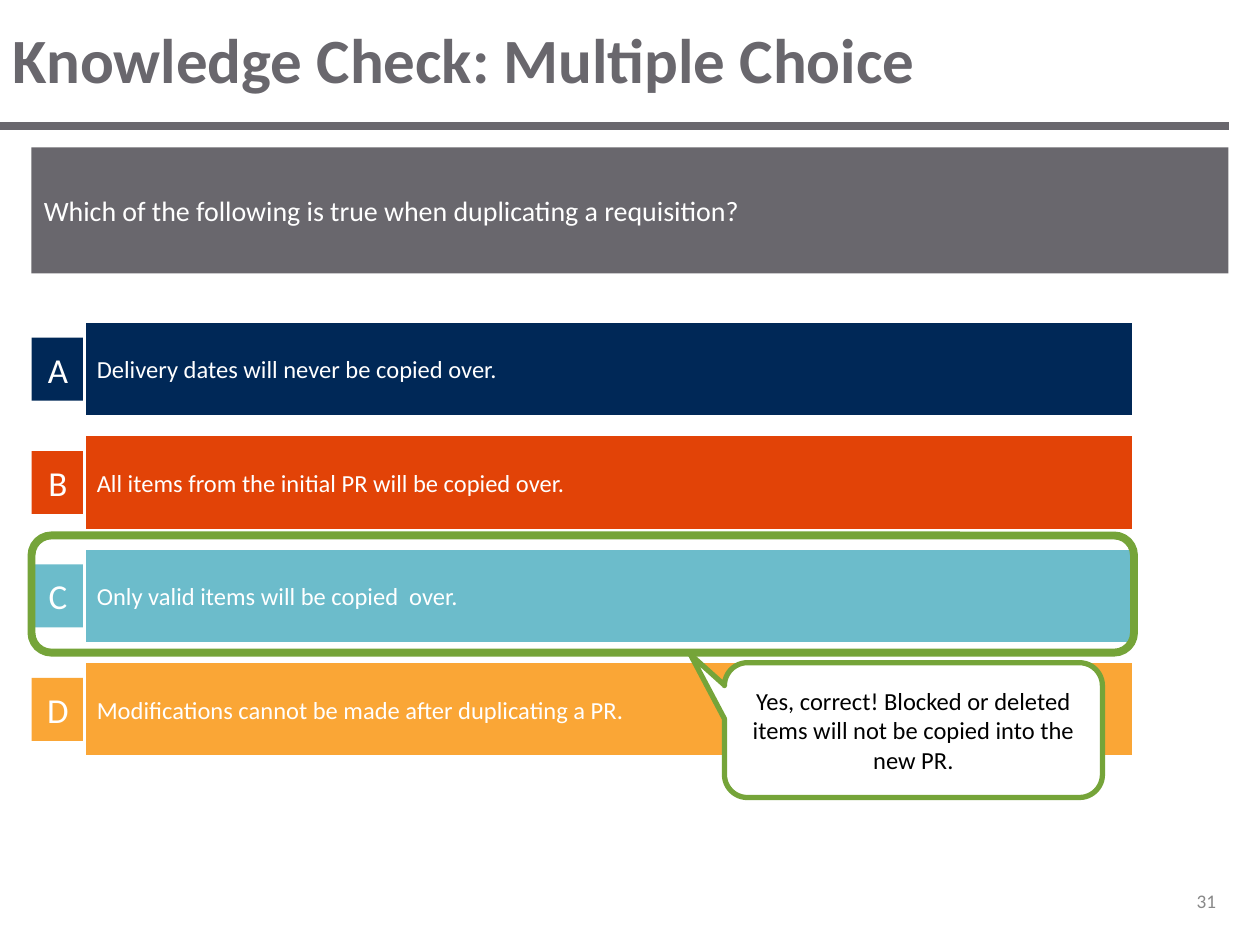
from lxml.etree import SubElement
from pptx import Presentation
from pptx.dml.color import RGBColor
from pptx.enum.shapes import MSO_CONNECTOR, MSO_SHAPE
from pptx.enum.text import MSO_ANCHOR, PP_ALIGN
from pptx.oxml.ns import qn
from pptx.util import Inches, Pt

TITLE = "Knowledge Check: Multiple Choice"
QUESTION = "Which of the following is true when duplicating a requisition?"
ANSWERS = [
    ("A", "Delivery dates will never be copied over.", "002857"),
    ("B", "All items from the initial PR will be copied over.", "E24307"),
    ("C", "Only valid items will be copied  over.", "6CBCCB"),
    ("D", "Modifications cannot be made after duplicating a PR.", "FAA636"),
]
REPLY = "Yes, correct! Blocked or deleted items will not be copied into the new PR."
PAGE = "31"
GRAY, GREEN, WHITE = "69676D", "75A439", "FFFFFF"
LEFT, TOP, STEP = 0.25, 2.55, 0.9
TAG_W, TAG_H, BAR_W, BAR_H = 0.42, 0.5, 8.33, 0.76


def color(value):
    return RGBColor.from_string(value)


def write(shape, text, size, ink=WHITE, align=PP_ALIGN.LEFT, bold=False):
    frame = shape.text_frame
    frame.word_wrap = True
    frame.vertical_anchor = MSO_ANCHOR.MIDDLE
    para = frame.paragraphs[0]
    para.alignment = align
    run = para.add_run()
    run.text = text
    font = run.font
    font.name, font.size, font.bold = "Calibri", Pt(size), bold
    font.color.rgb = color(ink)


def add_box(kind, box, fill=None, line=None, width=0):
    shape = slide.shapes.add_shape(kind, *map(Inches, box))
    shape.shadow.inherit = False
    if fill:
        shape.fill.solid()
        shape.fill.fore_color.rgb = color(fill)
    else:
        shape.fill.background()
    if line:
        shape.line.color.rgb = color(line)
        shape.line.width = Pt(width)
    else:
        shape.line.fill.background()
    return shape


deck = Presentation()
deck.slide_width, deck.slide_height = Inches(10), Inches(7.5)
slide = deck.slides.add_slide(deck.slide_layouts[5])

rule = slide.shapes.add_connector(
    MSO_CONNECTOR.STRAIGHT, Inches(0), Inches(1), Inches(9.75), Inches(1))
rule.line.color.rgb = color(GRAY)
rule.line.width = Pt(5)
SubElement(rule._element.spPr, qn("a:effectLst"))

title = slide.shapes.title
title.left, title.top = Inches(0), Inches(0)
title.width, title.height = Inches(10), Inches(0.92)
write(title, TITLE, 36, GRAY, bold=True)

number = slide.shapes.add_textbox(*map(Inches, (8.08, 6.95, 1.67, 0.4)))
write(number, PAGE, 11, "888888", PP_ALIGN.RIGHT)

banner = add_box(MSO_SHAPE.RECTANGLE, (LEFT, 1.17, 9.5, 1), GRAY)
write(banner, QUESTION, 16)

for i, (letter, text, fill) in enumerate(ANSWERS):
    top = TOP + i * STEP
    tag = add_box(MSO_SHAPE.RECTANGLE,
                  (LEFT, top + (BAR_H - TAG_H) / 2, TAG_W, TAG_H), fill)
    write(tag, letter, 20, align=PP_ALIGN.CENTER)
    bar = add_box(MSO_SHAPE.RECTANGLE,
                  (LEFT + TAG_W, top, BAR_W, BAR_H), fill, WHITE, 2)
    write(bar, text, 14)

ring = add_box(MSO_SHAPE.ROUNDED_RECTANGLE,
               (LEFT, 4.25, TAG_W + BAR_W, 0.93), line=GREEN, width=4.5)
ring.adjustments[0] = 0.17

bubble = add_box(MSO_SHAPE.ROUNDED_RECTANGULAR_CALLOUT,
                 (5.75, 5.26, 3, 1.07), WHITE, GREEN, 3)
for i, value in enumerate((-0.59, -0.56, 0.17)):
    bubble.adjustments[i] = value
write(bubble, REPLY, 14, "000000", PP_ALIGN.CENTER)

deck.save("out.pptx")
